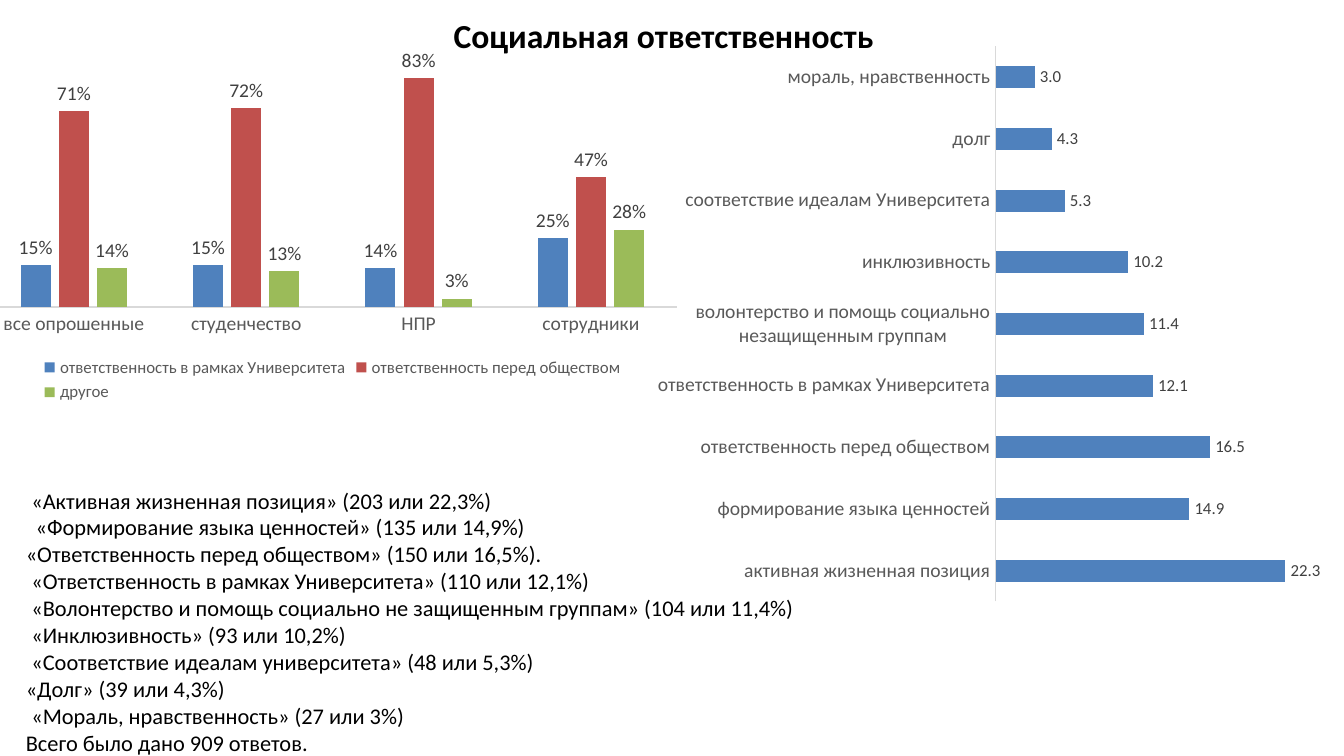
from dataclasses import dataclass

from pptx import Presentation
from pptx.chart.data import CategoryChartData
from pptx.dml.color import RGBColor
from pptx.enum.chart import XL_CHART_TYPE, XL_LABEL_POSITION, XL_LEGEND_POSITION, XL_TICK_MARK
from pptx.enum.text import MSO_ANCHOR, MSO_AUTO_SIZE, PP_ALIGN
from pptx.util import Emu, Pt

COLUMNS, BARS = XL_CHART_TYPE.COLUMN_CLUSTERED, XL_CHART_TYPE.BAR_CLUSTERED
OUTSIDE, BOTTOM, NO_TICK = XL_LABEL_POSITION.OUTSIDE_END, XL_LEGEND_POSITION.BOTTOM, XL_TICK_MARK.NONE
MIDDLE, GROW = MSO_ANCHOR.MIDDLE, MSO_AUTO_SIZE.SHAPE_TO_FIT_TEXT
CENTER, JUSTIFY = PP_ALIGN.CENTER, PP_ALIGN.JUSTIFY


@dataclass(frozen=True)
class Theme:
    font: str = "Calibri"
    text: str = "000000"
    axis_text: str = "595959"
    label_text: str = "404040"
    axis_line: str = "D9D9D9"
    series: tuple = ("4F81BD", "C0504D", "9BBB59")
    title_size: float = 18
    body_size: float = 12
    axis_size: float = 10.5
    chart_size: float = 10
    small_size: float = 9


THEME = Theme()
EMU_PER_PX = 9525  # 96 px to the inch

AUDIENCES = ["все опрошенные", "студенчество", "НПР", "сотрудники"]
VIEWS = {
    "ответственность в рамках Университета": (0.15, 0.15, 0.14, 0.25),
    "ответственность перед обществом": (0.71, 0.72, 0.83, 0.47),
    "другое": (0.14, 0.13, 0.03, 0.28),
}
VALUES = {
    "активная жизненная позиция": 22.3,
    "формирование языка ценностей": 14.9,
    "ответственность перед обществом": 16.5,
    "ответственность в рамках Университета": 12.1,
    "волонтерство и помощь социально незащищенным группам": 11.4,
    "инклюзивность": 10.2,
    "соответствие идеалам Университета": 5.3,
    "долг": 4.3,
    "мораль, нравственность": 3,
}
# Each line with its extra first-line indent in px
ANSWERS = [
    ("«Активная жизненная позиция» (203 или 22,3%)", 4),
    ("«Формирование языка ценностей» (135 или 14,9%)", 7),
    ("«Ответственность перед обществом» (150 или 16,5%).", 0),
    ("«Ответственность в рамках Университета» (110 или 12,1%)", 4),
    ("«Волонтерство и помощь социально не защищенным группам» (104 или 11,4%)", 4),
    ("«Инклюзивность» (93 или 10,2%)", 4),
    ("«Соответствие идеалам университета» (48 или 5,3%)", 4),
    ("«Долг» (39 или 4,3%)", 0),
    ("«Мораль, нравственность» (27 или 3%)", 4),
    ("Всего было дано 909 ответов.", 0),
]
ANSWER_INDENT = 47


def px(length):
    return Emu(length * EMU_PER_PX)


def set_font(font, size, color, bold=False):
    font.name = THEME.font
    font.size = Pt(size)
    font.bold = bold
    font.color.rgb = RGBColor.from_string(color)


def add_text_frame(page, box):
    frame = page.shapes.add_textbox(*map(px, box)).text_frame
    frame.word_wrap = True
    return frame


def add_title(page, box, text):
    frame = add_text_frame(page, box)
    frame.vertical_anchor = MIDDLE
    para = frame.paragraphs[0]
    para.text = text
    para.alignment = CENTER
    set_font(para.font, THEME.title_size, THEME.text, bold=True)


def add_answers(page, box):
    frame = add_text_frame(page, box)
    frame.auto_size = GROW
    for index, (text, extra) in enumerate(ANSWERS):
        para = frame.add_paragraph() if index else frame.paragraphs[0]
        para.text = text
        para.alignment = JUSTIFY
        properties = para._p.get_or_add_pPr()
        properties.set("marL", "0")
        properties.set("indent", str(px(ANSWER_INDENT + extra)))
        set_font(para.font, THEME.body_size, THEME.text)


def add_survey_chart(page, box, kind, categories, series, number_format, maximum, gap, label_size):
    data = CategoryChartData(number_format=number_format)
    data.categories = categories
    for name, values in series.items():
        data.add_series(name, values)
    chart = page.shapes.add_chart(kind, *map(px, box), data).chart
    chart.has_title = False
    chart.has_legend = False
    set_font(chart.font, THEME.chart_size, THEME.text)

    # Axes
    axis = chart.category_axis
    axis.major_tick_mark = axis.minor_tick_mark = NO_TICK
    axis.has_major_gridlines = False
    set_font(axis.tick_labels.font, THEME.axis_size, THEME.axis_text)
    axis.format.line.color.rgb = RGBColor.from_string(THEME.axis_line)
    axis.format.line.width = Pt(0.75)
    scale = chart.value_axis
    scale.visible = False
    scale.has_major_gridlines = False
    scale.minimum_scale, scale.maximum_scale = 0, maximum

    # Bars and their labels
    plot = chart.plots[0]
    plot.vary_by_categories = False
    plot.gap_width = gap
    for bars, color in zip(plot.series, THEME.series):
        bars.invert_if_negative = False
        bars.format.fill.solid()
        bars.format.fill.fore_color.rgb = RGBColor.from_string(color)
        labels = bars.data_labels
        labels.show_value = True
        labels.position = OUTSIDE
        labels.number_format = number_format
        labels.number_format_is_linked = False
        set_font(labels.font, label_size, THEME.label_text)
    return chart


def add_audience_chart(page, box):
    chart = add_survey_chart(page, box, COLUMNS, AUDIENCES, VIEWS, "0%", 0.9, 219, THEME.axis_size)
    chart.plots[0].overlap = -27
    chart.has_legend = True
    chart.legend.position = BOTTOM
    chart.legend.include_in_layout = False
    set_font(chart.legend.font, THEME.small_size, THEME.axis_text)


def add_value_chart(page, box):
    series = {"Series 1": tuple(VALUES.values())}
    add_survey_chart(page, box, BARS, list(VALUES), series, "0.0", 25, 182, THEME.small_size)


def main():
    deck = Presentation()
    deck.slide_width, deck.slide_height = px(960), px(540)
    page = deck.slides.add_slide(deck.slide_layouts[6])
    add_title(page, (45, 0, 858, 50), "Социальная ответственность")
    add_audience_chart(page, (-19, 35, 513, 256))
    add_value_chart(page, (460, 25, 493, 413))
    add_answers(page, (-38, 343, 651, 204))
    deck.save("out.pptx")


if __name__ == "__main__":
    main()
